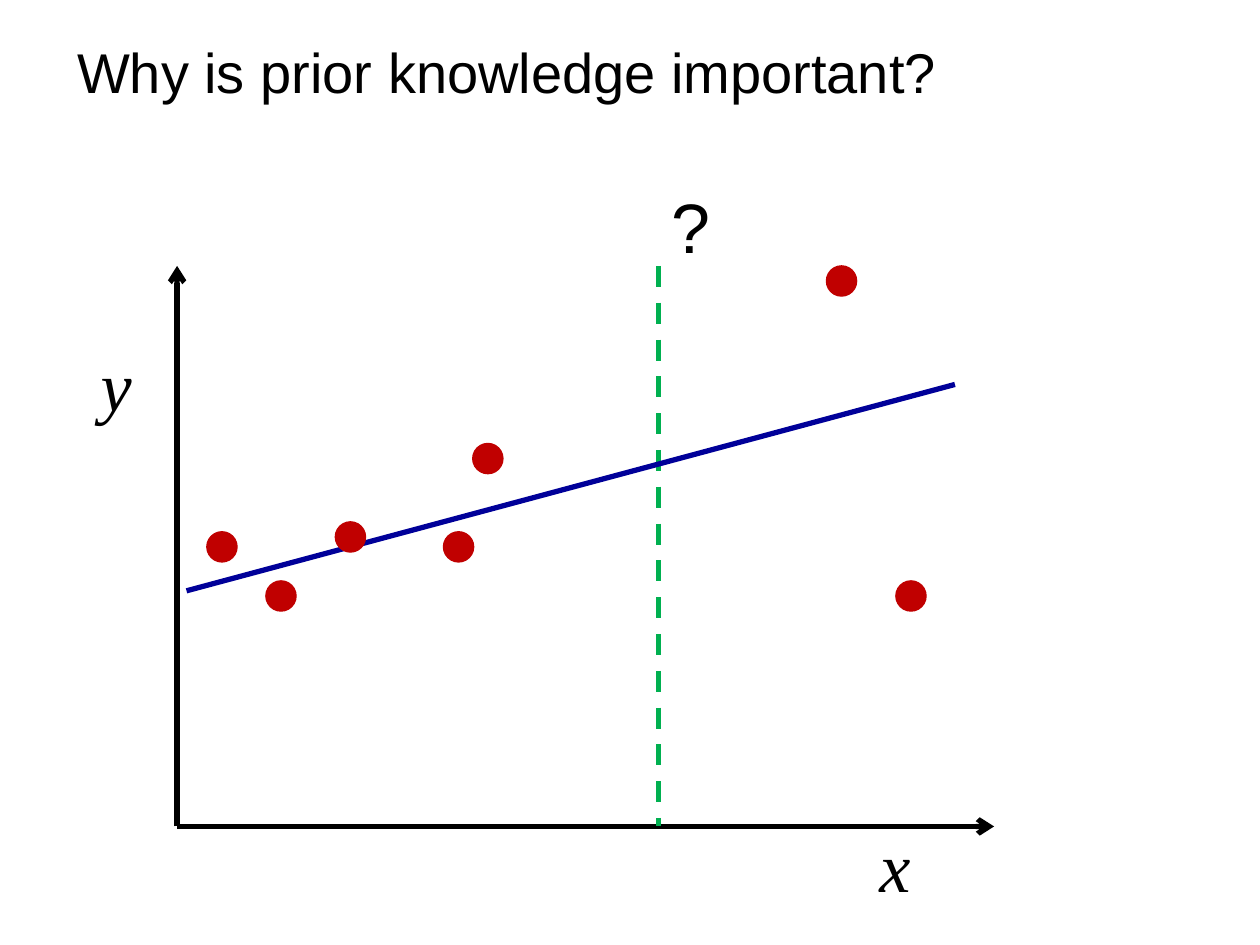
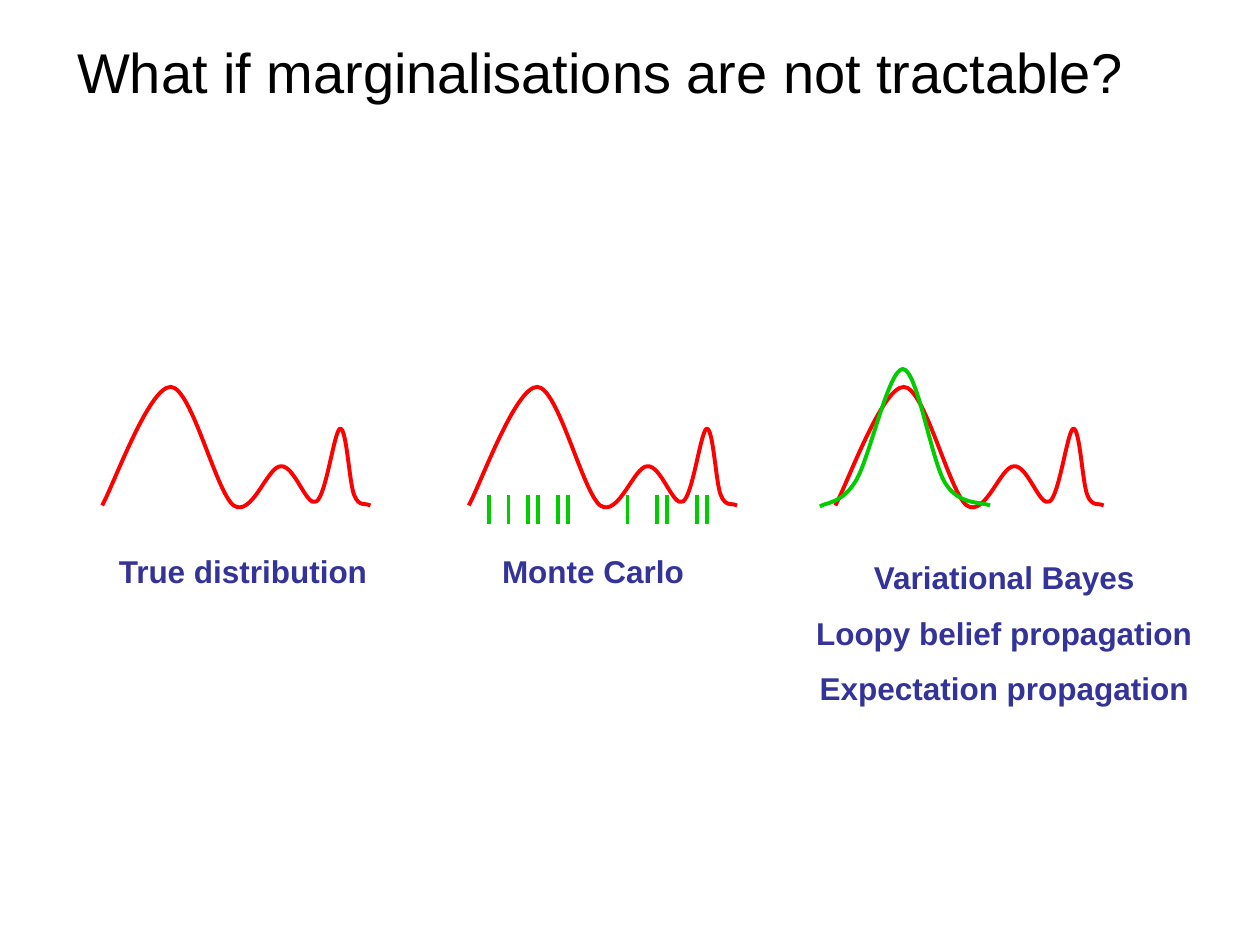
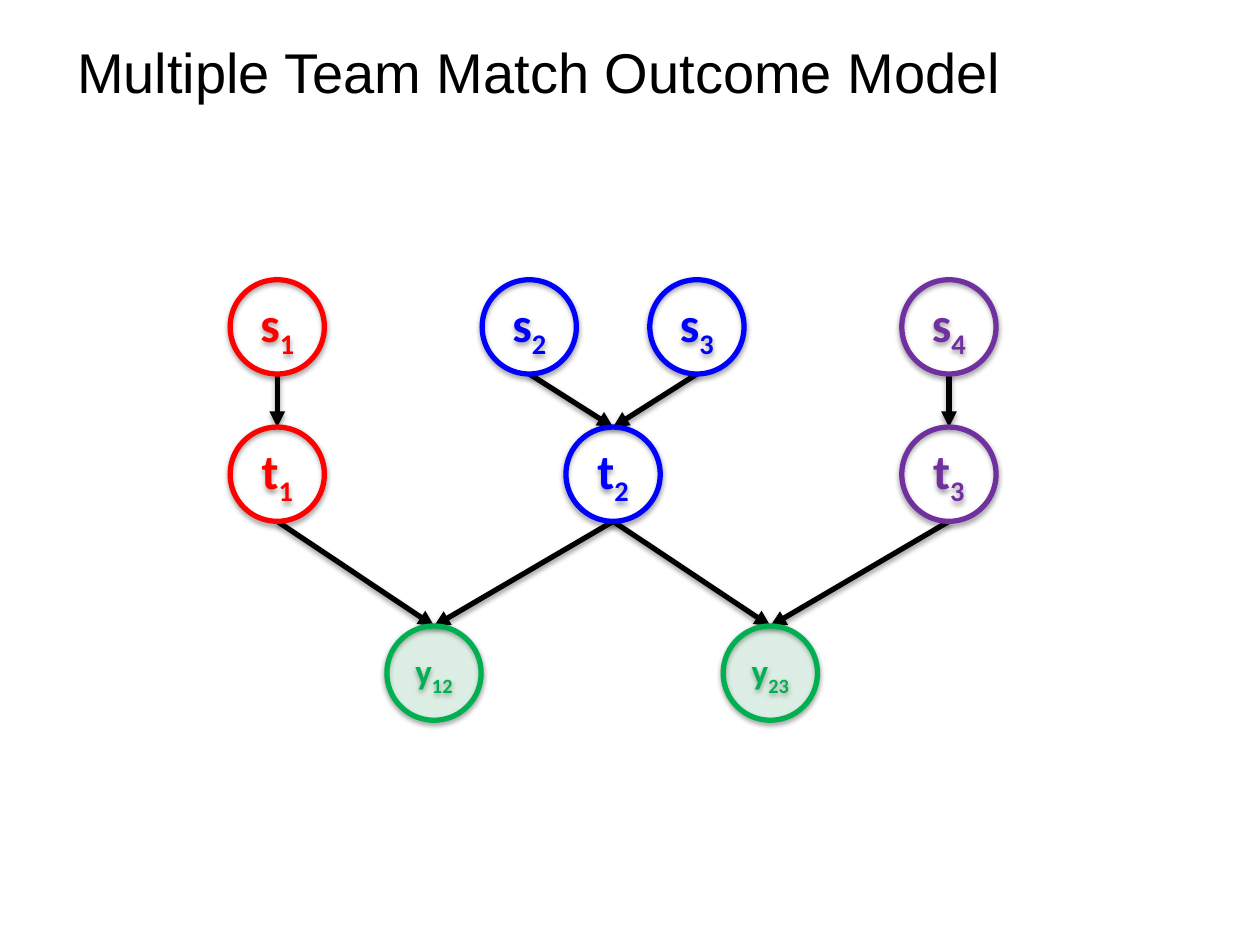
from dataclasses import dataclass

from lxml import etree
from pptx import Presentation
from pptx.dml.color import RGBColor
from pptx.enum.dml import MSO_LINE
from pptx.enum.shapes import MSO_CONNECTOR, MSO_SHAPE
from pptx.enum.text import MSO_ANCHOR, MSO_AUTO_SIZE, PP_ALIGN
from pptx.oxml.ns import qn
from pptx.util import Cm, Pt

DASH = MSO_LINE.DASH
STRAIGHT = MSO_CONNECTOR.STRAIGHT
ELLIPSE = MSO_SHAPE.OVAL
MIDDLE = MSO_ANCHOR.MIDDLE
FIT_SHAPE = MSO_AUTO_SIZE.SHAPE_TO_FIT_TEXT
NO_FIT = MSO_AUTO_SIZE.NONE
LEFT, CENTER = PP_ALIGN.LEFT, PP_ALIGN.CENTER
TITLE_ONLY = 5


@dataclass(frozen=True)
class Theme:
    black: str = "000000"
    data_point: str = "C00000"
    fit_line: str = "000099"
    query: str = "00B050"
    distribution: str = "FF0000"
    approximation: str = "00CC00"
    caption: str = "333399"
    team_1: str = "FF0000"
    team_2: str = "0000FF"
    team_3: str = "7030A0"
    outcome: str = "00B050"
    body_font: str = "Arial"
    math_font: str = "Times New Roman"
    node_font: str = "Calibri"
    title_size: int = 32
    symbol_size: int = 40
    caption_size: int = 18
    node_size: int = 28
    outcome_size: int = 20
    thick: float = 3
    medium: float = 2.25
    thin: float = 0.75


def add_child(parent, tag, **attributes):
    return etree.SubElement(parent, qn(tag), attributes)


class Deck:
    def __init__(self, theme):
        self.theme = theme
        self.presentation = Presentation()
        self.presentation.slide_width = Cm(25.4)
        self.presentation.slide_height = Cm(19.05)
        self.slide = None

    def add_slide(self, title):
        layout = self.presentation.slide_layouts[TITLE_ONLY]
        self.slide = self.presentation.slides.add_slide(layout)
        shape = self.slide.shapes.title
        shape.left, shape.top = Cm(1.3), Cm(0.53)
        shape.width, shape.height = Cm(23.01), Cm(1.8)
        frame = shape.text_frame
        frame.vertical_anchor = MIDDLE
        frame.auto_size = NO_FIT
        paragraph = frame.paragraphs[0]
        paragraph.alignment = LEFT
        self.add_run(paragraph, title, self.theme.title_size, self.theme.black)

    def add_run(self, paragraph, text, size, color, font=None, bold=False, italic=False):
        run = paragraph.add_run()
        run.text = text
        run.font.name = font or self.theme.body_font
        run.font.size = Pt(size)
        run.font.bold = bold
        run.font.italic = italic
        run.font.color.rgb = RGBColor.from_string(color)
        return run

    def set_line(self, shape, color, width):
        shape.line.color.rgb = RGBColor.from_string(color)
        shape.line.width = Pt(width)

    def set_effects(self, shape, shadow):
        """Replace the inherited effects; call after fill and line are set."""
        effects = add_child(shape._element.spPr, "a:effectLst")
        if shadow:
            outer = add_child(effects, "a:outerShdw", blurRad=str(Pt(3.1)), dist=str(Pt(1.6)),
                              dir="5400000", rotWithShape="0")
            color = add_child(outer, "a:srgbClr", val=self.theme.black)
            add_child(color, "a:alpha", val="38000")

    def add_line(self, start, end, color, width, head=None, dash=None, shadow=False):
        points = [Cm(value) for value in (*start, *end)]
        connector = self.slide.shapes.add_connector(STRAIGHT, *points)
        self.set_line(connector, color, width)
        if dash:
            connector.line.dash_style = dash
        if head:
            add_child(connector.line._get_or_add_ln(), "a:tailEnd", type=head)
        self.set_effects(connector, shadow)

    def add_circle(self, left, top, diameter, color, width, fill=None, opacity=100, shadow=False):
        shape = self.slide.shapes.add_shape(ELLIPSE, Cm(left), Cm(top), Cm(diameter), Cm(diameter))
        if fill:
            shape.fill.solid()
            shape.fill.fore_color.rgb = RGBColor.from_string(fill)
            if opacity < 100:
                fill_color = shape._element.spPr.find(qn("a:solidFill"))[0]
                add_child(fill_color, "a:alpha", val=str(opacity * 1000))
        else:
            shape.fill.background()
        self.set_line(shape, color, width)
        self.set_effects(shape, shadow)
        return shape

    def add_node(self, center, top, diameter, name, index, color, size, fill=None):
        shape = self.add_circle(center - diameter / 2, top, diameter, color, self.theme.thick,
                                fill, opacity=10, shadow=True)
        frame = shape.text_frame
        frame.vertical_anchor = MIDDLE
        frame.margin_left = frame.margin_right = 0
        paragraph = frame.paragraphs[0]
        paragraph.alignment = CENTER
        self.add_run(paragraph, name, size, color, self.theme.node_font, bold=True)
        subscript = self.add_run(paragraph, index, size, color, self.theme.node_font, bold=True)
        subscript._r.get_or_add_rPr().set("baseline", "-25000")

    def add_text(self, box, lines, size, color, alignment=LEFT, **style):
        frame = self.slide.shapes.add_textbox(*[Cm(value) for value in box]).text_frame
        frame.word_wrap = True
        frame.auto_size = FIT_SHAPE
        for number, line in enumerate(lines):
            paragraph = frame.add_paragraph() if number else frame.paragraphs[0]
            paragraph.alignment = alignment
            if number:
                paragraph.space_before = Pt(10)
            self.add_run(paragraph, line, size, color, **style)

    def add_curve(self, points, left, color):
        """Draw Bézier segments: a start point, then three points per segment."""
        start, *controls = [(Cm(left + x), Cm(y)) for x, y in points]
        builder = self.slide.shapes.build_freeform(*start)
        builder.add_line_segments(controls, close=False)
        shape = builder.convert_to_shape()
        outline = shape._element.spPr.find(".//" + qn("a:path"))
        segments = outline.findall(qn("a:lnTo"))
        for first in range(0, len(segments), 3):
            bezier = add_child(outline, "a:cubicBezTo")
            for segment in segments[first:first + 3]:
                bezier.append(segment[0])
                outline.remove(segment)
        shape.fill.background()
        self.set_line(shape, color, self.theme.medium)
        self.set_effects(shape, False)


def build_prior_knowledge(deck):
    theme = deck.theme
    origin_x, origin_y, axis_top, query_x = 3.57, 16.66, 5.36, 13.28
    deck.add_slide("Why is prior knowledge important?")
    for axis_end in ((20.04, origin_y), (origin_x, axis_top)):
        deck.add_line((origin_x, origin_y), axis_end, theme.black, theme.thick, head="arrow")
    deck.add_line((query_x, axis_top), (query_x, origin_y), theme.query, theme.thick, dash=DASH)
    deck.add_line((3.76, 11.91), (19.25, 7.75), theme.fit_line, theme.thick)
    data_points = [(4.17, 10.72), (5.36, 11.71), (6.76, 10.52), (8.94, 10.72),
                   (9.53, 8.94), (16.66, 5.36), (18.06, 11.71)]
    for left, top in data_points:
        deck.add_circle(left, top, 0.61, theme.data_point, theme.thin, fill=theme.data_point)
    for name, left, top in (("y", 1.78, 6.76), ("x", 17.48, 16.46)):
        deck.add_text((left, top, 1.4, 1.96), [name], theme.symbol_size, theme.black,
                      font=theme.math_font, italic=True)
    deck.add_text((query_x, 3.58, 1.4, 1.96), ["?"], theme.symbol_size, theme.black)


def build_marginalisations(deck):
    theme = deck.theme
    first_left, panel_step = 2.06, 7.39
    distribution = [
        (0, 10.19),
        (0.23, 9.78), (0.94, 7.8), (1.38, 7.8),
        (1.8, 7.8), (2.29, 9.91), (2.65, 10.19),
        (3.02, 10.44), (3.33, 9.4), (3.6, 9.4),
        (3.88, 9.37), (4.12, 10.24), (4.32, 10.11),
        (4.52, 9.98), (4.68, 8.66), (4.8, 8.64),
        (4.93, 8.64), (4.98, 9.73), (5.08, 9.98),
        (5.18, 10.24), (5.33, 10.13), (5.41, 10.19),
    ]
    approximation = [
        (-0.31, 10.21),
        (-0.2, 10.13), (0.13, 10.16), (0.41, 9.7),
        (0.69, 9.25), (1.07, 7.44), (1.36, 7.44),
        (1.65, 7.44), (1.93, 9.27), (2.21, 9.73),
        (2.49, 10.19), (2.92, 10.11), (3.12, 10.19),
    ]
    captions = [
        ((1.85, 11, 6.1, 1.02), ["True distribution"]),
        ((9.25, 11, 5.41, 1.02), ["Monte Carlo"]),
        ((16.08, 11.13, 8.33, 3.33),
         ["Variational Bayes", "Loopy belief propagation", "Expectation propagation"]),
    ]
    deck.add_slide("What if marginalisations are not tractable?")
    for panel, (box, lines) in enumerate(captions):
        deck.add_curve(distribution, first_left + panel * panel_step, theme.distribution)
        deck.add_text(box, lines, theme.caption_size, theme.caption, CENTER, bold=True)
    for step in (0, 2, 4, 5, 7, 8, 14, 17, 18, 21, 22):
        sample_x = 9.85 + 0.2 * step
        deck.add_line((sample_x, 10.57), (sample_x, 9.98), theme.approximation, theme.medium)
    deck.add_curve(approximation, first_left + 2 * panel_step, theme.approximation)


def build_match_model(deck):
    theme = deck.theme
    diameter = 1.9
    row_tops = {"s": 5.64, "t": 8.61, "y": 12.62}
    nodes = {
        "s1": (5.59, theme.team_1), "s2": (10.67, theme.team_2),
        "s3": (14.05, theme.team_2), "s4": (19.13, theme.team_3),
        "t1": (5.59, theme.team_1), "t2": (12.36, theme.team_2), "t3": (19.13, theme.team_3),
        "y12": (8.75, theme.outcome), "y23": (15.53, theme.outcome),
    }
    edges = [("s1", "t1"), ("s2", "t2"), ("s3", "t2"), ("s4", "t3"),
             ("t1", "y12"), ("t2", "y12"), ("t2", "y23"), ("t3", "y23")]
    deck.add_slide("Multiple Team Match Outcome Model")
    for parent, child in edges:
        start = (nodes[parent][0], row_tops[parent[0]] + diameter)
        end = (nodes[child][0], row_tops[child[0]])
        deck.add_line(start, end, theme.black, theme.thick, head="triangle", shadow=True)
    for label, (center, color) in nodes.items():
        name, index = label[0], label[1:]
        observed = name == "y"
        size = theme.outcome_size if observed else theme.node_size
        deck.add_node(center, row_tops[name], diameter, name, index, color, size,
                      fill=color if observed else None)


def main():
    deck = Deck(Theme())
    build_prior_knowledge(deck)
    build_marginalisations(deck)
    build_match_model(deck)
    deck.presentation.save("out.pptx")


if __name__ == "__main__":
    main()
